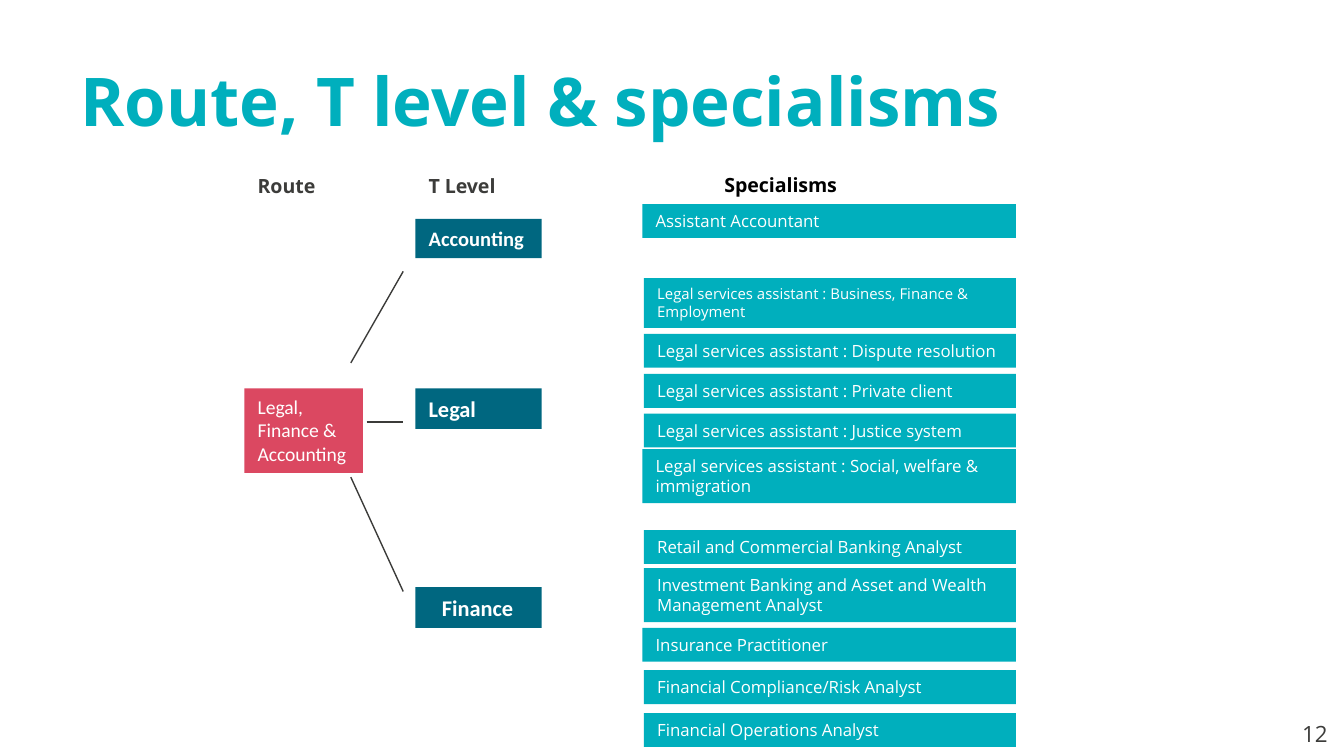
import dataclasses
import typing

import pptx
import pptx.dml.color
import pptx.enum.shapes
import pptx.enum.text
import pptx.oxml.ns
import pptx.util
from lxml import etree

Cm = pptx.util.Cm
Anchor = pptx.enum.text.MSO_ANCHOR


@dataclasses.dataclass(frozen=True)
class Theme:
    """Colours, fonts and type sizes of the deck."""
    teal: str = "00AFBD"
    petrol: str = "006780"
    red: str = "DB4861"
    white: str = "FFFFFF"
    black: str = "000000"
    grey: str = "3C3C3A"
    line: str = "3B3B39"
    sans: str = "Open Sans"
    label: str = "Calibri"
    title_size: float = 36
    number_size: float = 12
    heading_size: float = 10.5
    accounting_size: float = 11
    level_size: float = 12
    item_size: float = 9
    small_size: float = 8


class Box(typing.NamedTuple):
    """A rectangle in centimetres."""
    left: float
    top: float
    width: float
    height: float

    def inner(self, left, top, width, height):
        """Return a box placed relative to this one."""
        return Box(self.left + left, self.top + top, width, height)


THEME = Theme()


def rgb(colour):
    """Turn a hex string into a colour."""
    return pptx.dml.color.RGBColor.from_string(colour)


def add_text(page, box, text, *, size, colour, font=THEME.sans, bold=False,
             fill=None, anchor=Anchor.TOP, inset=0.25):
    """Place text in a box, filled as a rectangle when a fill is given."""
    place = [Cm(length) for length in box]
    if fill:
        shape = page.shapes.add_shape(
            pptx.enum.shapes.MSO_SHAPE.RECTANGLE, *place)
        shape.shadow.inherit = False
        shape.fill.solid()
        shape.fill.fore_color.rgb = rgb(fill)
        shape.line.fill.background()
    else:
        shape = page.shapes.add_textbox(*place)
    frame = shape.text_frame
    frame.word_wrap = True
    frame.vertical_anchor = anchor
    frame.margin_left = Cm(inset)
    para = frame.paragraphs[0]
    para.alignment = pptx.enum.text.PP_ALIGN.LEFT
    span = para.add_run()
    span.text = text
    span.font.size = pptx.util.Pt(size)
    span.font.name = font
    span.font.bold = bold
    span.font.color.rgb = rgb(colour)


def add_heading(page, box, text, colour):
    """Place a column heading at the foot of its box."""
    add_text(page, box, text, size=THEME.heading_size, colour=colour,
             bold=True, anchor=Anchor.BOTTOM)


def add_line(page, box, start, end):
    """Draw a thin line between two points of a box."""
    line = page.shapes.add_connector(
        pptx.enum.shapes.MSO_CONNECTOR.STRAIGHT,
        Cm(box.left + start[0]), Cm(box.top + start[1]),
        Cm(box.left + end[0]), Cm(box.top + end[1]))
    line.line.color.rgb = rgb(THEME.line)
    line.line.width = pptx.util.Pt(0.75)
    properties = line._element.spPr
    etree.SubElement(properties, pptx.oxml.ns.qn("a:effectLst"))


def add_routes(page, box):
    """Draw the route, its T levels and the lines between them."""
    level_left, level_width = 3.23, 2.39
    add_heading(page, box.inner(0, 0, 3, 1.14), "Route", THEME.grey)
    add_heading(page, box.inner(level_left, 0, level_width, 1.14),
                "T Level", THEME.grey)
    add_text(page, box.inner(0, 4.62, 2.24, 1.6), "Legal, Finance & Accounting",
             size=THEME.heading_size, colour=THEME.white, font=THEME.label,
             fill=THEME.red)
    levels = [
        ("Accounting", 1.42, 0.74, THEME.accounting_size, 0.25),
        ("Legal", 4.62, 0.77, THEME.level_size, 0.25),
        ("Finance", 8.38, 0.77, THEME.level_size, 0.5),
    ]
    for text, top, height, size, inset in levels:
        add_text(page, box.inner(level_left, top, level_width, height), text,
                 size=size, colour=THEME.white, font=THEME.label, bold=True,
                 fill=THEME.petrol, inset=inset)
    for start, end in [((2.01, 4.14), (3, 2.41)),
                       ((2.31, 5.26), (3, 5.26)),
                       ((2.01, 6.3), (3, 8.46))]:
        add_line(page, box, start, end)


def add_specialisms(page, box):
    """Stack the specialisms under their heading."""
    add_heading(page, box.inner(1.3, 0, 6.55, 1.14), "Specialisms", THEME.black)
    single, double = 0.64, 1.02
    flush, indented = 0, 0.03
    normal, small = THEME.item_size, THEME.small_size
    assistant = "Legal services assistant : "
    items = [
        ("Assistant Accountant", 1.17, single, flush, normal),
        (assistant + "Business, Finance & Employment",
         2.57, 0.94, indented, small),
        (assistant + "Dispute resolution", 3.62, single, indented, normal),
        (assistant + "Private client", 4.38, single, indented, normal),
        (assistant + "Justice system", 5.13, single, indented, normal),
        (assistant + "Social, welfare & immigration",
         5.8, double, flush, normal),
        ("Retail and Commercial Banking Analyst",
         7.33, single, indented, normal),
        ("Investment Banking and Asset and Wealth Management Analyst",
         8.05, double, indented, normal),
        ("Insurance Practitioner", 9.18, single, flush, normal),
        ("Financial Compliance/Risk Analyst", 9.98, single, indented, normal),
        ("Financial Operations Analyst", 10.79, single, indented, normal),
    ]
    for text, top, height, left, size in items:
        add_text(page, box.inner(left, top, box.width - left, height), text,
                 size=size, colour=THEME.white, fill=THEME.teal)


def add_page(deck):
    """Build the page from its title, number and two regions."""
    page = deck.slides.add_slide(deck.slide_layouts[6])
    add_text(page, Box(1.27, 1.14, 22.86, 1.5), "Route, T level & specialisms",
             size=THEME.title_size, colour=THEME.teal, bold=True,
             anchor=Anchor.MIDDLE)
    add_text(page, Box(24.36, 13.49, 1.04, 0.76), "12",
             size=THEME.number_size, colour=THEME.grey)
    add_routes(page, Box(4.62, 2.72, 5.62, 9.15))
    add_specialisms(page, Box(12.14, 2.69, 7.06, 11.43))


def main():
    """Create and save the deck."""
    deck = pptx.Presentation()
    deck.slide_width, deck.slide_height = Cm(25.4), Cm(14.29)
    add_page(deck)
    deck.save("out.pptx")


if __name__ == "__main__":
    main()
